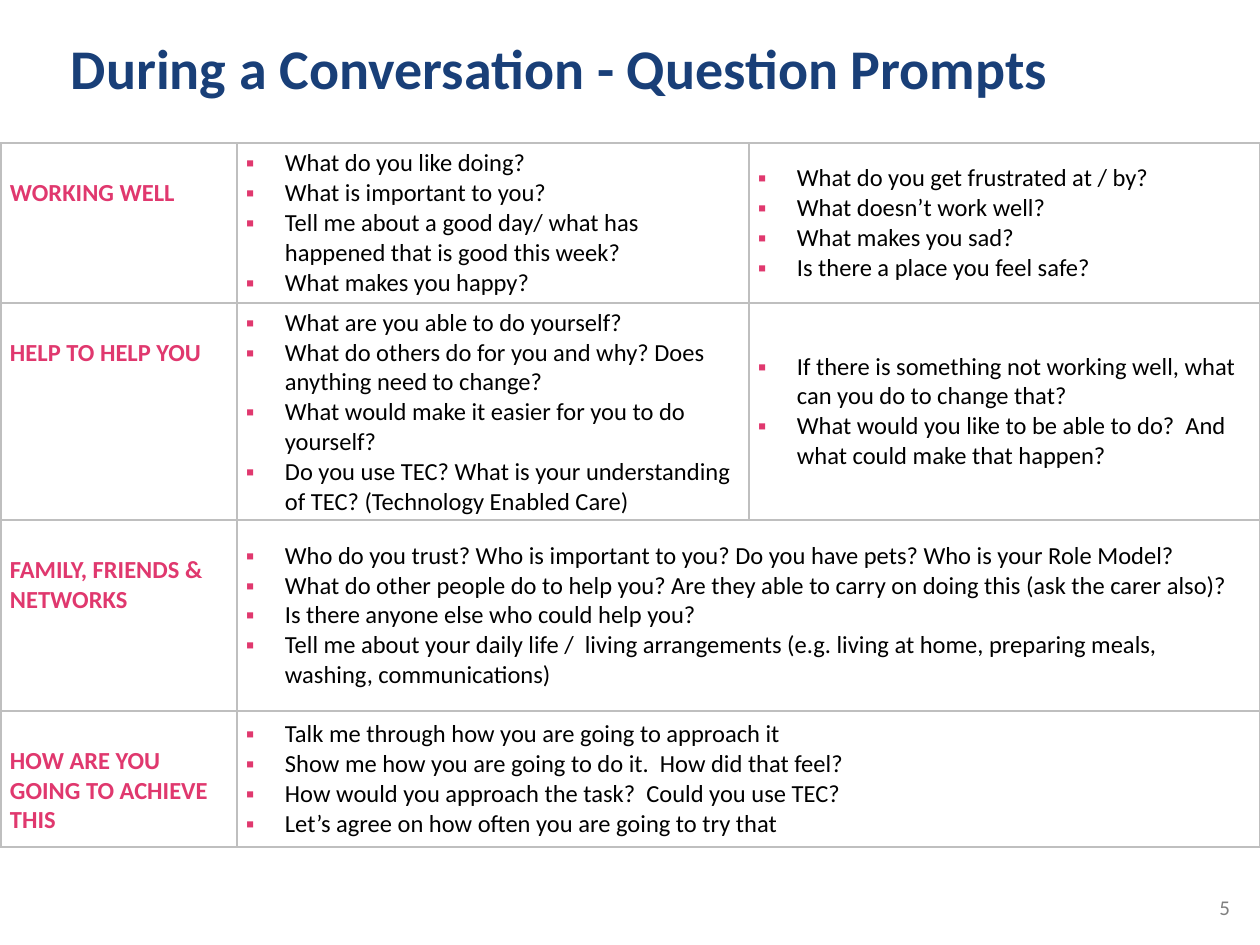
"""Build the slide of question prompts for use during a conversation."""
from dataclasses import dataclass

from lxml import etree
from pptx import Presentation
from pptx.dml.color import RGBColor
from pptx.enum.shapes import MSO_CONNECTOR
from pptx.enum.text import MSO_ANCHOR
from pptx.oxml.ns import qn
from pptx.util import Emu, Pt

STRAIGHT = MSO_CONNECTOR.STRAIGHT
TOP, MIDDLE = MSO_ANCHOR.TOP, MSO_ANCHOR.MIDDLE

TITLE = "During a Conversation - Question Prompts"
PAGE_NUMBER = "5"
PROMPTS = [
    ("WORKING WELL", [
        ["What do you like doing?",
         "What is important to you?",
         "Tell me about a good day/ what has happened that is good this week?",
         "What makes you happy?"],
        ["What do you get frustrated at / by?",
         "What doesn’t work well?",
         "What makes you sad?",
         "Is there a place you feel safe?"]]),
    ("HELP TO HELP YOU", [
        ["What are you able to do yourself?",
         "What do others do for you and why? Does anything need to change?",
         "What would make it easier for you to do yourself?",
         "Do you use TEC? What is your understanding of TEC? (Technology Enabled Care)"],
        ["If there is something not working well, what can you do to change that?",
         "What would you like to be able to do?  And what could make that happen?"]]),
    ("FAMILY, FRIENDS & NETWORKS", [
        ["Who do you trust? Who is important to you? Do you have pets? Who is your Role Model?",
         "What do other people do to help you? Are they able to carry on doing this (ask the carer also)?",
         "Is there anyone else who could help you?",
         "Tell me about your daily life /  living arrangements (e.g. living at home, preparing meals, "
         "washing, communications)"]]),
    ("HOW ARE YOU GOING TO ACHIEVE THIS", [
        ["Talk me through how you are going to approach it",
         "Show me how you are going to do it.  How did that feel?",
         "How would you approach the task?  Could you use TEC?",
         "Let’s agree on how often you are going to try that"]]),
]

COLUMN_WIDTHS = [236, 512, 511]
ROW_HEIGHTS = [160, 217, 191, 136]
SIDE_MARGIN, EDGE_MARGIN, HEADING_MARGIN = 9, 5, 35
BULLET_INDENT = 39


@dataclass(frozen=True)
class Theme:
    font: str = "Calibri"
    title: str = "193F78"
    accent: str = "E0386E"
    body: str = "000000"
    page: str = "808080"
    border: str = "BFBFBF"
    rule: str = "C9D300"
    title_size: int = 32
    body_size: int = 14
    page_size: int = 12


THEME = Theme()


def px(length):
    return Emu(round(length * 914400 / 126))


def style(paragraph, size, color, bold=False):
    for run in paragraph.runs:
        run.font.name = THEME.font
        run.font.size = Pt(size)
        run.font.bold = bold
        run.font.color.rgb = RGBColor.from_string(color)


def add_text(slide, box, text, size, color, bold=False):
    text_frame = slide.shapes.add_textbox(*map(px, box)).text_frame
    text_frame.word_wrap = True
    text_frame.text = text
    style(text_frame.paragraphs[0], size, color, bold)
    return text_frame


def add_rule(slide, y, width):
    rule = slide.shapes.add_connector(STRAIGHT, 0, px(y), px(width), px(y))
    rule.line.color.rgb = RGBColor.from_string(THEME.rule)
    rule.line.width = Pt(0.5)
    etree.SubElement(rule._element.spPr, qn("a:effectLst"))


def add_bullet(paragraph):
    properties = paragraph._p.get_or_add_pPr()
    properties.set("marL", str(px(BULLET_INDENT)))
    properties.set("indent", str(-px(BULLET_INDENT)))
    color = etree.SubElement(properties, qn("a:buClr"))
    etree.SubElement(color, qn("a:srgbClr"), val=THEME.accent)
    etree.SubElement(properties, qn("a:buFont"), typeface="Arial")
    etree.SubElement(properties, qn("a:buChar"), char="▪")


def format_cell(cell):
    properties = cell._tc.get_or_add_tcPr()
    for side in ("lnL", "lnR", "lnT", "lnB"):
        line = etree.SubElement(properties, qn(f"a:{side}"), w=str(Pt(1)))
        fill = etree.SubElement(line, qn("a:solidFill"))
        etree.SubElement(fill, qn("a:srgbClr"), val=THEME.border)
    cell.fill.background()
    cell.margin_left = cell.margin_right = px(SIDE_MARGIN)
    cell.margin_top = cell.margin_bottom = px(EDGE_MARGIN)


def fill_heading(cell, heading):
    cell.margin_top = px(HEADING_MARGIN)
    cell.vertical_anchor = TOP
    cell.text_frame.text = heading
    style(cell.text_frame.paragraphs[0], THEME.body_size, THEME.accent, True)


def fill_questions(cell, questions):
    cell.vertical_anchor = MIDDLE
    cell.text_frame.text = "\n".join(questions)
    for paragraph in cell.text_frame.paragraphs:
        add_bullet(paragraph)
        style(paragraph, THEME.body_size, THEME.body)


def add_prompts(slide):
    frame = slide.shapes.add_table(
        len(ROW_HEIGHTS), len(COLUMN_WIDTHS), px(1), px(143),
        px(sum(COLUMN_WIDTHS)), px(sum(ROW_HEIGHTS)))
    table = frame.table
    table.first_row = table.horz_banding = False
    for column, width in zip(table.columns, COLUMN_WIDTHS):
        column.width = px(width)
    for row, height in zip(table.rows, ROW_HEIGHTS):
        row.height = px(height)
    for cell in table.iter_cells():
        format_cell(cell)
    for row, (heading, groups) in enumerate(PROMPTS):
        fill_heading(table.cell(row, 0), heading)
        if len(groups) == 1:
            table.cell(row, 1).merge(table.cell(row, 2))
        for column, questions in enumerate(groups, start=1):
            fill_questions(table.cell(row, column), questions)


def main():
    presentation = Presentation()
    presentation.slide_width, presentation.slide_height = px(1260), px(945)
    slide = presentation.slides.add_slide(presentation.slide_layouts[6])

    add_text(slide, (1207, 888, 69, 38), PAGE_NUMBER, THEME.page_size, THEME.page)
    add_rule(slide, 142, 1260)
    title = add_text(slide, (71, 0, 1109, 142), TITLE, THEME.title_size, THEME.title, True)
    title.margin_left = title.margin_right = title.margin_top = title.margin_bottom = 0
    title.vertical_anchor = MIDDLE
    title.paragraphs[0].line_spacing = 0.9
    add_prompts(slide)

    presentation.save("out.pptx")


if __name__ == "__main__":
    main()
